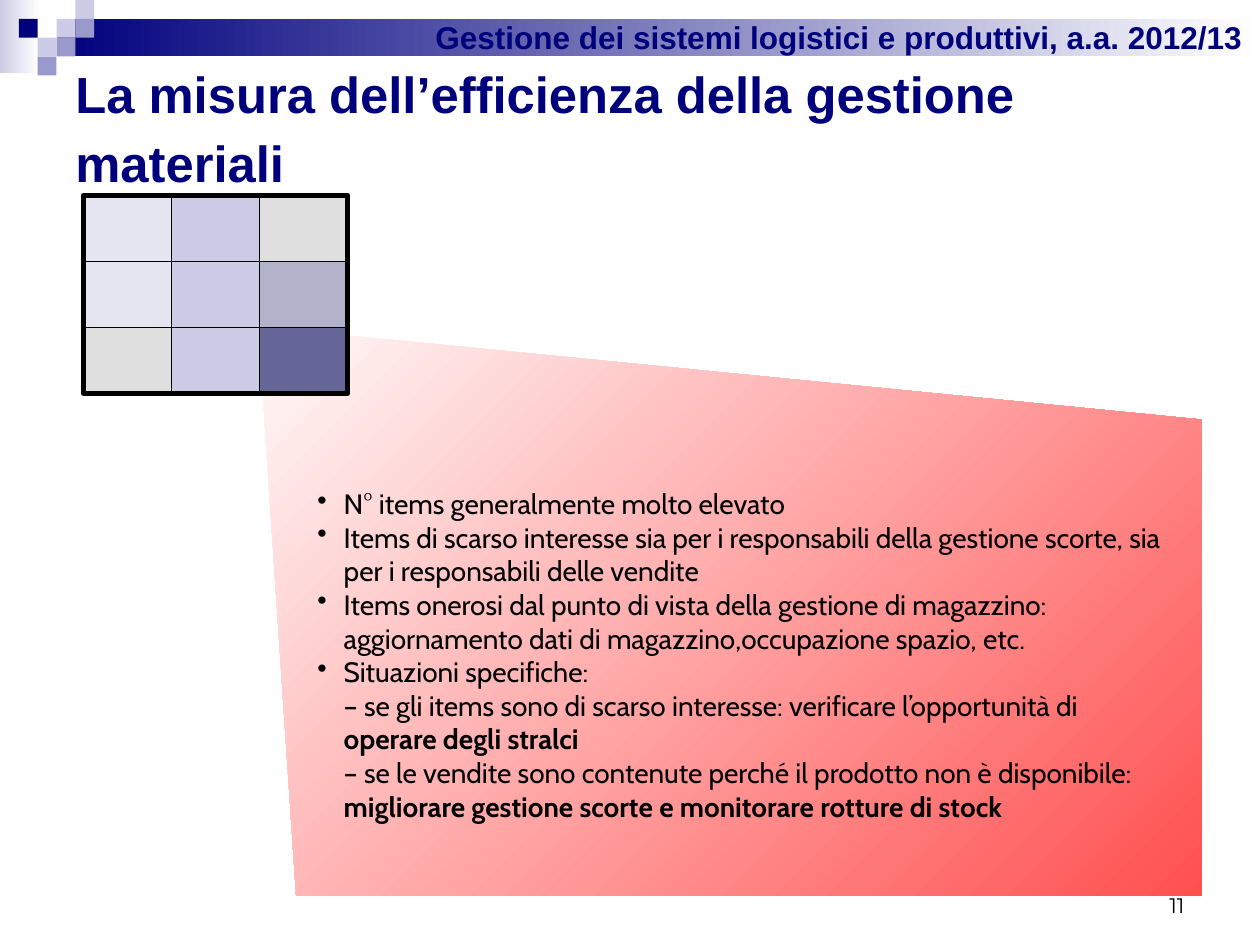
from dataclasses import dataclass

from pptx import Presentation
from pptx.dml.color import RGBColor
from pptx.enum.shapes import MSO_SHAPE
from pptx.enum.text import MSO_ANCHOR, PP_ALIGN
from pptx.oxml.ns import qn
from pptx.oxml.xmlchemy import OxmlElement
from pptx.util import Cm, Pt

RECT = MSO_SHAPE.RECTANGLE
TOP, MIDDLE, BOTTOM = MSO_ANCHOR.TOP, MSO_ANCHOR.MIDDLE, MSO_ANCHOR.BOTTOM
LEFT, RIGHT = PP_ALIGN.LEFT, PP_ALIGN.RIGHT


@dataclass(frozen=True)
class Theme:
    navy: str = "00007D"
    violet: str = "9999CC"
    lavender: str = "CCCCE6"
    slate: str = "666699"
    grey: str = "C0C0C0"
    red: str = "FF5050"
    blush: str = "FFF8F8"
    white: str = "FFFFFF"
    black: str = "000000"
    heading_font: str = "Arial"
    body_font: str = "Cabin"
    number_font: str = "Montserrat"
    title: float = 29
    header: float = 18
    body: float = 16
    number: float = 12


THEME = Theme()

# Each item: text, bold ending on its own line, bulleted
ITEMS = [
    ("N° items generalmente molto elevato", "", True),
    ("Items di scarso interesse sia per i responsabili della gestione scorte, "
     "sia per i responsabili delle vendite", "", True),
    ("Items onerosi dal punto di vista della gestione di magazzino: "
     "aggiornamento dati di magazzino,occupazione spazio, etc.", "", True),
    ("Situazioni specifiche:", "", True),
    ("– se gli items sono di scarso interesse: verificare l’opportunità di",
     "operare degli stralci", False),
    ("– se le vendite sono contenute perché il prodotto non è disponibile:",
     "migliorare gestione scorte e monitorare rotture di stock", False),
]

# Each cell: colour, opacity in percent
MATRIX = [
    [(THEME.lavender, 50), (THEME.violet, 50), (THEME.grey, 50)],
    [(THEME.lavender, 50), (THEME.violet, 50), (THEME.slate, 50)],
    [(THEME.grey, 50), (THEME.violet, 50), (THEME.slate, 100)],
]


def rgb(color):
    return RGBColor.from_string(color)


def fill_gradient(sp, start, end, angle=0):
    sp.fill.gradient()
    sp.fill.gradient_angle = angle
    for stop, color in zip(sp.fill.gradient_stops, (start, end)):
        stop.color.rgb = rgb(color)


def add_rect(slide, x, y, w, h, color=None, opacity=100, line=None):
    sp = slide.shapes.add_shape(RECT, Cm(x), Cm(y), Cm(w), Cm(h))
    sp.shadow.inherit = False
    if color:
        sp.fill.solid()
        sp.fill.fore_color.rgb = rgb(color)
    else:
        sp.fill.background()
    if opacity < 100:
        alpha = OxmlElement("a:alpha")
        alpha.set("val", str(opacity * 1000))
        sp.element.spPr.find(qn("a:solidFill"))[0].append(alpha)
    if line:
        sp.line.color.rgb = rgb(THEME.black)
        sp.line.width = Pt(line)
    else:
        sp.line.fill.background()
    return sp


def add_text_frame(slide, x, y, w, h, anchor):
    tf = slide.shapes.add_textbox(Cm(x), Cm(y), Cm(w), Cm(h)).text_frame
    tf.word_wrap = True
    tf.vertical_anchor = anchor
    return tf


def style(p, font, size, color, bold=None):
    p.font.name, p.font.size, p.font.bold = font, Pt(size), bold
    p.font.color.rgb = rgb(color)


def add_line_of_text(slide, box, text, font, size, color, bold=False,
                     anchor=TOP, align=LEFT, spacing=1.0):
    p = add_text_frame(slide, *box, anchor).paragraphs[0]
    p.text, p.alignment, p.line_spacing = text, align, spacing
    style(p, font, size, color, bold)


def add_header(slide, x, y, w):
    """Gradient bar with a stepped pattern of squares at its left end."""
    unit = 0.38
    fade = add_rect(slide, x, y, 0.79, 1.47)
    fill_gradient(fade, THEME.lavender, THEME.white)
    bar = add_rect(slide, x + 3 * unit, y + unit, w - 3 * unit, 2 * unit)
    fill_gradient(bar, THEME.navy, THEME.white)
    squares = [(3, 1, THEME.lavender), (4, 0, THEME.lavender),
               (4, 1, THEME.violet), (2, 2, THEME.lavender),
               (1, 1, THEME.navy), (3, 2, THEME.violet), (2, 3, THEME.violet)]
    for col, row, color in squares:
        add_rect(slide, x + col * unit, y + row * unit, unit, unit, color)
    add_line_of_text(slide, (x + 8.53, y + 0.23, w - 8.48, 1.02),
                     "Gestione dei sistemi logistici e produttivi, a.a. 2012/13",
                     THEME.heading_font, THEME.header, THEME.navy, bold=True)


def add_callout(slide, x, y, w, h):
    """Red wedge that widens from the matrix's last cell."""
    points = [(1.7, 0), (w, 1.7), (w, h), (0.69, h), (0, 0.94)]
    corners = [(Cm(x + dx), Cm(y + dy)) for dx, dy in points]
    builder = slide.shapes.build_freeform(*corners[0])
    builder.add_line_segments(corners[1:], close=True)
    sp = builder.convert_to_shape()
    sp.shadow.inherit = False
    sp.line.fill.background()
    fill_gradient(sp, THEME.blush, THEME.red, angle=315)


def add_items(slide, x, y, w, h):
    tf = add_text_frame(slide, x, y, w, h, MIDDLE)
    for i, (text, ending, bulleted) in enumerate(ITEMS):
        p = tf.add_paragraph() if i else tf.paragraphs[0]
        style(p, THEME.body_font, THEME.body, THEME.black)
        p.add_run().text = text
        if ending:
            p.add_line_break()
            r = p.add_run()
            r.text, r.font.bold = ending, True
        pPr = p._p.get_or_add_pPr()
        pPr.set("marL", str(Cm(0.53)))
        if bulleted:
            pPr.set("indent", str(-Cm(0.53)))
            bullet = OxmlElement("a:buChar")
            bullet.set("char", "•")
            pPr.insert_element_before(bullet, "a:tabLst", "a:defRPr")


def add_matrix(slide, x, y, w, h):
    cell_w, cell_h = w / 3, h / 3
    for row, cells in enumerate(MATRIX):
        for col, (color, opacity) in enumerate(cells):
            add_rect(slide, x + col * cell_w, y + row * cell_h, cell_w, cell_h,
                     color, opacity, line=0.75)
    add_rect(slide, x, y, w, h, line=2.75)


def main():
    prs = Presentation()
    prs.slide_width, prs.slide_height = Cm(25.4), Cm(19.05)
    slide = prs.slides.add_slide(prs.slide_layouts[6])
    add_header(slide, 0, 0, 25.4)
    add_line_of_text(slide, (1.27, 1.27, 22.86, 2.46),
                     "La misura dell’efficienza della gestione materiali",
                     THEME.heading_font, THEME.title, THEME.navy, bold=True,
                     anchor=MIDDLE, spacing=1.13)
    add_line_of_text(slide, (18.21, 17.35, 5.92, 1.27), "11",
                     THEME.number_font, THEME.number, THEME.black,
                     anchor=BOTTOM, align=RIGHT)
    add_callout(slide, 5.28, 6.76, 18.95, 11.3)
    add_items(slide, 6.15, 9.68, 18.36, 7.04)
    add_matrix(slide, 1.68, 3.94, 5.33, 3.99)
    prs.save("out.pptx")


if __name__ == "__main__":
    main()
